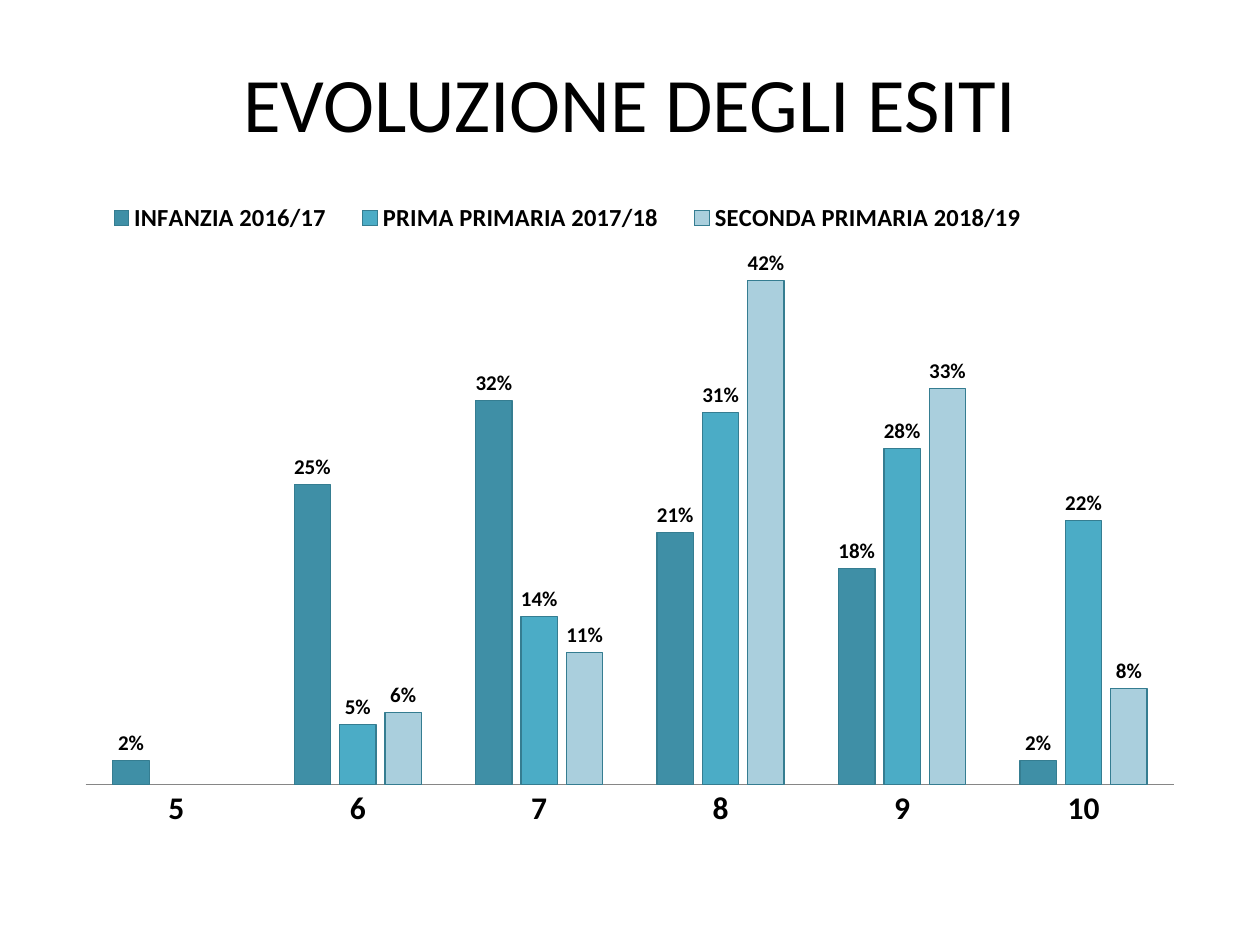
import pptx
import pptx.util
import pptx.dml.color
import pptx.chart.data
import pptx.enum.chart
import pptx.enum.text
import pptx.oxml
import pptx.oxml.ns

Pt = pptx.util.Pt
FACE = "Calibri"
GRADES = ["5", "6", "7", "8", "9", "10"]
SERIES = [
    ("INFANZIA 2016/17", "3F8FA6", [0.02, 0.25, 0.32, 0.21, 0.18, 0.02]),
    ("PRIMA PRIMARIA 2017/18", "4BACC6", [None, 0.05, 0.14, 0.31, 0.28, 0.22]),
    ("SECONDA PRIMARIA 2018/19", "AACFDD", [None, 0.06, 0.11, 0.42, 0.33, 0.08]),
]


def color(code):
    return pptx.dml.color.RGBColor.from_string(code)


def style(font, size, bold=False):
    font.name = FACE
    font.size = Pt(size)
    font.bold = bold
    font.color.rgb = color("000000")


def layout(part, index, box, inner=False):
    for old in part.findall(pptx.oxml.ns.qn("c:layout")):
        part.remove(old)
    target = '<c:layoutTarget val="inner"/>' if inner else ""
    sizes = "".join(f'<c:{key} val="{val}"/>' for key, val in zip("xywh", box))
    part.insert(index, pptx.oxml.parse_xml(
        f'<c:layout {pptx.oxml.ns.nsdecls("c")}><c:manualLayout>{target}'
        f'<c:xMode val="edge"/><c:yMode val="edge"/>{sizes}'
        '</c:manualLayout></c:layout>'))


def title(slide, x, y, w, h):
    frame = slide.shapes.add_textbox(Pt(x), Pt(y), Pt(w), Pt(h)).text_frame
    frame.word_wrap = True
    frame.vertical_anchor = pptx.enum.text.MSO_ANCHOR.MIDDLE
    frame.text = "EVOLUZIONE DEGLI ESITI"
    line = frame.paragraphs[0]
    line.alignment = pptx.enum.text.PP_ALIGN.CENTER
    style(line.runs[0].font, 44)


def bars(slide, x, y, w, h):
    kinds = pptx.enum.chart
    data = pptx.chart.data.CategoryChartData(number_format="0%")
    data.categories = GRADES
    for name, fill, vals in SERIES:
        data.add_series(name, vals)
    chart = slide.shapes.add_chart(
        kinds.XL_CHART_TYPE.COLUMN_CLUSTERED,
        Pt(x), Pt(y), Pt(w), Pt(h), data).chart
    style(chart.font, 18)
    chart.has_title = False

    chart.has_legend = True
    legend = chart.legend
    legend.position = kinds.XL_LEGEND_POSITION.TOP
    legend.include_in_layout = False
    style(legend.font, 14, True)
    layout(legend._element, 1, (0.02, 0.02, 0.85, 0.06))
    layout(chart._chartSpace.chart.plotArea, 0, (0.02, 0.09, 0.96, 0.82), True)

    scale = chart.value_axis
    scale.visible = False
    scale.has_major_gridlines = False
    scale.minimum_scale = 0
    scale.maximum_scale = 0.45
    base = chart.category_axis
    base.major_tick_mark = kinds.XL_TICK_MARK.NONE
    base.format.line.color.rgb = color("868686")
    style(base.tick_labels.font, 18, True)

    plot = chart.plots[0]
    plot.gap_width = 150
    plot.overlap = -25
    plot.vary_by_categories = False
    for item, (name, fill, vals) in zip(plot.series, SERIES):
        item.format.fill.solid()
        item.format.fill.fore_color.rgb = color(fill)
        item.format.line.color.rgb = color("357D91")
        item.format.line.width = Pt(0.75)
        labels = item.data_labels
        labels.show_value = True
        labels.number_format = "0%"
        labels.number_format_is_linked = False
        labels.position = kinds.XL_LABEL_POSITION.OUTSIDE_END
        style(labels.font, 12, True)


def main():
    deck = pptx.Presentation()
    deck.slide_width = Pt(720)
    deck.slide_height = Pt(540)
    slide = deck.slides.add_slide(deck.slide_layouts[6])
    title(slide, 36, 21.6, 648, 72.7)
    bars(slide, 36, 105.8, 648, 376.6)
    deck.save("out.pptx")


if __name__ == "__main__":
    main()
